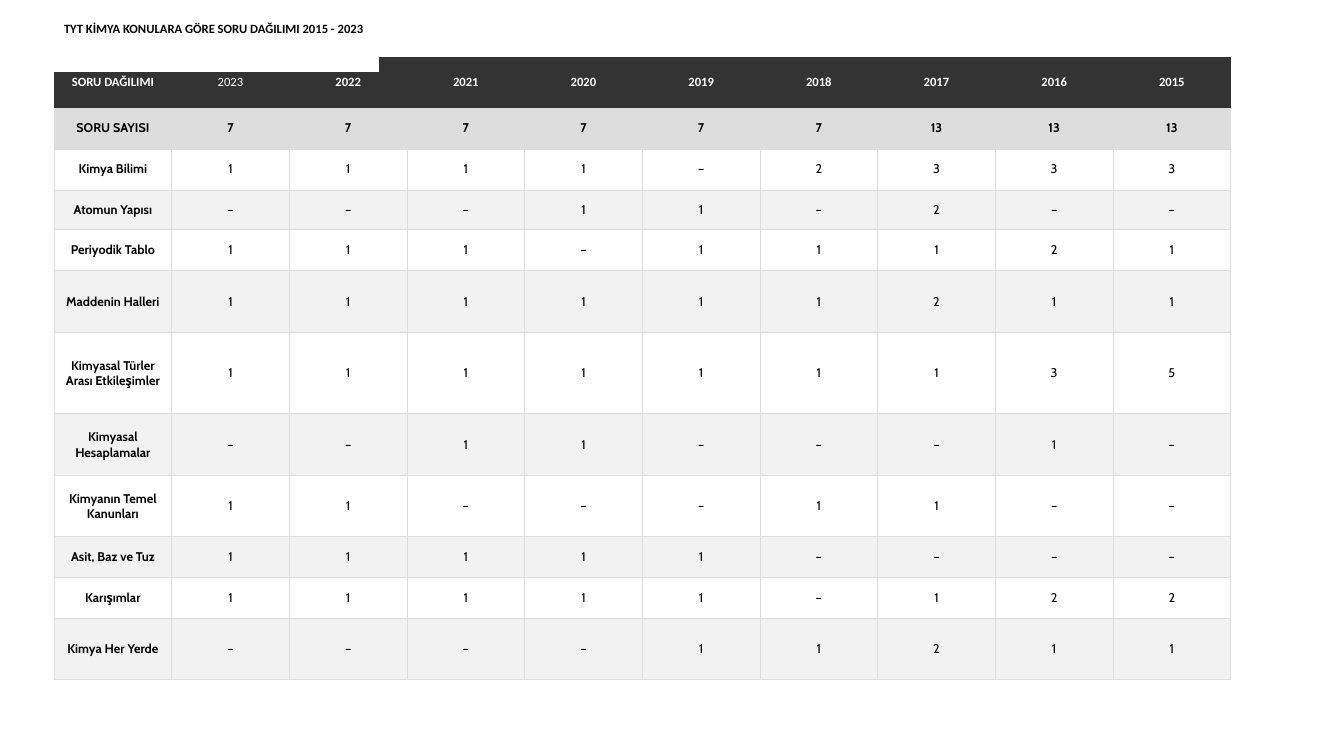
import pptx
import pptx.dml.color
import pptx.enum.shapes
import pptx.enum.text
import pptx.oxml
import pptx.oxml.ns
import pptx.util

PX = 914400 / 100.8
BORDER = "DDDDDD"


def px(length):
    return pptx.util.Emu(round(length * PX))


def add_span(para, text, font, color, bold):
    span = para.add_run()
    span.text = text
    span.font.name = font
    span.font.size = pptx.util.Pt(9)
    span.font.bold = bold
    span.font.color.rgb = pptx.dml.color.RGBColor.from_string(color)


rows = [
    (51, "SORU DAĞILIMI", "2023 2022 2021 2020 2019 2018 2017 2016 2015"),
    (41, "SORU SAYISI", "7 7 7 7 7 7 13 13 13"),
    (41, "Kimya Bilimi", "1 1 1 1 – 2 3 3 3"),
    (40, "Atomun Yapısı", "– – – 1 1 – 2 – –"),
    (41, "Periyodik Tablo", "1 1 1 – 1 1 1 2 1"),
    (62, "Maddenin Halleri", "1 1 1 1 1 1 2 1 1"),
    (81, "Kimyasal Türler Arası Etkileşimler", "1 1 1 1 1 1 1 3 5"),
    (62, "Kimyasal Hesaplamalar", "– – 1 1 – – – 1 –"),
    (61, "Kimyanın Temel Kanunları", "1 1 – – – 1 1 – –"),
    (41, "Asit, Baz ve Tuz", "1 1 1 1 1 – – – –"),
    (41, "Karışımlar", "1 1 1 1 1 – 1 2 2"),
    (61, "Kimya Her Yerde", "– – – – 1 1 2 1 1"),
]

deck = pptx.Presentation()
deck.slide_width = px(1344)
deck.slide_height = px(756)
page = deck.slides.add_slide(deck.slide_layouts[6])

table_height = sum(height for height, topic, counts in rows)
table = page.shapes.add_table(len(rows), 10, px(54), px(57), px(1177), px(table_height)).table
table.first_row = False
table.horz_banding = False

for row, (height, topic, counts) in enumerate(rows):
    table.rows[row].height = px(height)
    header = row == 0
    for column, text in enumerate([topic] + counts.split()):
        cell = table.cell(row, column)
        cell.vertical_anchor = pptx.enum.text.MSO_ANCHOR.MIDDLE
        cell.margin_left = cell.margin_right = px(1 if header else 8)
        cell.margin_top = cell.margin_bottom = px(12 if header else 8)

        properties = cell._tc.get_or_add_tcPr()
        for side in ("lnL", "lnR", "lnT", "lnB"):
            paint = f'<a:solidFill><a:srgbClr val="{BORDER}"/></a:solidFill>'
            if header and side != "lnB":
                paint = "<a:noFill/>"
            properties.append(pptx.oxml.parse_xml(
                f'<a:{side} {pptx.oxml.ns.nsdecls("a")} w="9525">{paint}</a:{side}>'))

        if row > 1 and row % 2 == 0:
            cell.fill.background()
        else:
            fill = "333333" if header else BORDER if row == 1 else "F2F2F2"
            cell.fill.solid()
            cell.fill.fore_color.rgb = pptx.dml.color.RGBColor.from_string(fill)

        para = cell.text_frame.paragraphs[0]
        para.alignment = pptx.enum.text.PP_ALIGN.CENTER
        bold = column == 0 or (row < 2 and text != "2023")
        add_span(para, text, "Calibri" if header else "Cabin", "FFFFFF" if header else "000000", bold)

title = page.shapes.add_shape(pptx.enum.shapes.MSO_SHAPE.RECTANGLE, px(54), px(16), px(325), px(56))
title.shadow.inherit = False
title.fill.solid()
title.fill.fore_color.rgb = pptx.dml.color.RGBColor.from_string("FFFFFF")
title.line.fill.background()
frame = title.text_frame
frame.word_wrap = False
frame.vertical_anchor = pptx.enum.text.MSO_ANCHOR.TOP
frame.margin_left = frame.margin_right = px(10)
frame.margin_top = frame.margin_bottom = px(5)
para = frame.paragraphs[0]
para.alignment = pptx.enum.text.PP_ALIGN.LEFT
add_span(para, "TYT KİMYA KONULARA GÖRE SORU DAĞILIMI 2015 - 2023", "Calibri", "000000", True)

deck.save("out.pptx")
